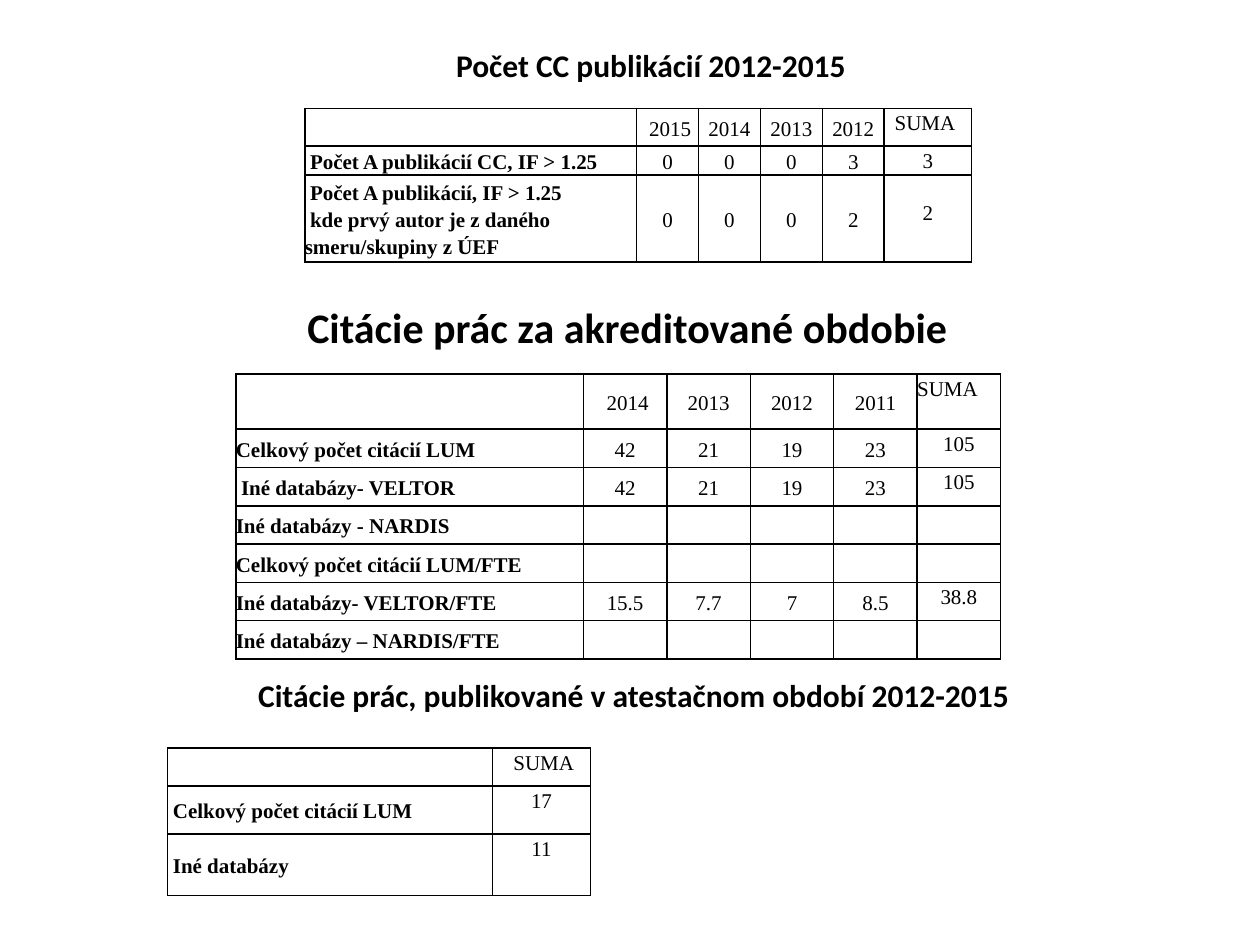
import pptx
import pptx.util
import pptx.dml.color
import pptx.enum.text
import pptx.oxml
import pptx.oxml.ns

Pt = pptx.util.Pt
ALIGN = pptx.enum.text.PP_ALIGN
ANCHOR = pptx.enum.text.MSO_ANCHOR

COLORS = {"text": "000000", "border": "000000"}
HEADING_FONT = "Calibri"
TABLE_FONT = "Times New Roman"


def write_text(paragraph, text, *, font, size, bold=False, align=ALIGN.LEFT, spacing=None):
    """Put one formatted run into a paragraph."""
    paragraph.alignment = align
    if spacing:
        paragraph.line_spacing = spacing
    run = paragraph.add_run()
    run.text = text
    run.font.name = font
    run.font.size = Pt(size)
    run.font.bold = bold
    run.font.color.rgb = pptx.dml.color.RGBColor.from_string(COLORS["text"])


def format_heading(shape, text, size, wrap):
    frame = shape.text_frame
    frame.word_wrap = wrap
    frame.auto_size = pptx.enum.text.MSO_AUTO_SIZE.SHAPE_TO_FIT_TEXT
    frame.vertical_anchor = ANCHOR.TOP
    write_text(frame.paragraphs[0], text, font=HEADING_FONT, size=size, bold=True)


def add_title(slide, text, box, size):
    title = slide.shapes.title
    title.left, title.top, title.width, title.height = map(Pt, box)
    format_heading(title, text, size, wrap=False)


def add_heading(slide, text, box, size, wrap=False):
    format_heading(slide.shapes.add_textbox(*map(Pt, box)), text, size, wrap)


def set_borders(cell):
    """Draw a 1 pt line on each side of a cell."""
    properties = cell._tc.get_or_add_tcPr()
    namespace = pptx.oxml.ns.nsdecls("a")
    for index, side in enumerate(("lnL", "lnR", "lnT", "lnB")):
        line = pptx.oxml.parse_xml(
            f'<a:{side} {namespace} w="{Pt(1)}"><a:solidFill>'
            f'<a:srgbClr val="{COLORS["border"]}"/></a:solidFill></a:{side}>')
        properties.insert(index, line)


def fill_cell(cell, text, is_label, is_sum, is_sum_header):
    cell.margin_left = cell.margin_right = cell.margin_top = cell.margin_bottom = 0
    cell.vertical_anchor = ANCHOR.TOP if is_sum else ANCHOR.MIDDLE
    cell.fill.background()
    set_borders(cell)
    if not text:
        return
    align = ALIGN.LEFT if is_label or is_sum_header else ALIGN.CENTER
    frame = cell.text_frame
    for index, line in enumerate(text.split("\n")):
        paragraph = frame.add_paragraph() if index else frame.paragraphs[0]
        write_text(paragraph, line, font=TABLE_FONT, size=12, bold=is_label,
                   align=align, spacing=1.15)


def add_table(slide, left, top, widths, heights, rows, sum_indent=0):
    """Add a table with bold labels first and top-aligned sums last."""
    table = slide.shapes.add_table(len(rows), len(widths), Pt(left), Pt(top),
                                   Pt(sum(widths)), Pt(sum(heights))).table
    table.first_row = table.horz_banding = False
    for column, width in zip(table.columns, widths):
        column.width = Pt(width)
    for row, height in zip(table.rows, heights):
        row.height = Pt(height)
    last = len(widths) - 1
    for r, values in enumerate(rows):
        for c, text in enumerate(values):
            fill_cell(table.cell(r, c), text, is_label=c == 0, is_sum=c == last,
                      is_sum_header=r == 0 and c == last)
    table.cell(0, last).margin_left = Pt(sum_indent)
    return table


def main():
    presentation = pptx.Presentation()
    presentation.slide_width, presentation.slide_height = Pt(720), Pt(540)
    slide = presentation.slides.add_slide(presentation.slide_layouts[5])

    # Publications
    add_title(slide, "Počet CC publikácií 2012-2015", (253.4, 22.6, 239, 29), 18)
    publications = add_table(
        slide, 174.2, 61.9, [189.6] + [35.4] * 4 + [49.8], [21.3, 16.6, 49.6],
        [["", " 2015", "2014", "2013", "2012", "SUMA"],
         [" Počet A publikácií CC, IF > 1.25", "0", "0", "0", "3", "3"],
         [" Počet A publikácií, IF > 1.25\n kde prvý autor je z daného smeru/skupiny z ÚEF",
          "0", "0", "0", "2", "2"]],
        sum_indent=6)
    publications.cell(2, 5).margin_top = Pt(13.5)

    # Citations in the accredited period
    add_heading(slide, "Citácie prác za akreditované obdobie", (168.5, 168.5, 384, 36), 24)
    blank = [""] * 5
    citations = ["42", "21", "19", "23", "105"]
    add_table(
        slide, 134.8, 213.8, [198.6] + [47.7] * 5, [31.5] + [21.9] * 6,
        [["", " 2014", "2013", "2012", "2011", "SUMA"],
         ["Celkový počet citácií LUM", *citations],
         [" Iné databázy- VELTOR", *citations],
         ["Iné databázy - NARDIS", *blank],
         ["Celkový počet citácií LUM/FTE", *blank],
         ["Iné databázy- VELTOR/FTE", "15.5", "7.7", "7", "8.5", "38.8"],
         ["Iné databázy – NARDIS/FTE", *blank]])

    # Citations of work published in the attestation period
    add_heading(slide, "Citácie prác, publikované v atestačnom období 2012-2015",
                (140.4, 382.6, 478, 29), 18, wrap=True)
    add_table(
        slide, 95.8, 427.5, [185.6, 56.1], [21.3, 27.4, 35.3],
        [["", "SUMA"],
         [" Celkový počet citácií LUM", "17"],
         [" Iné databázy", "11"]],
        sum_indent=12)

    presentation.save("out.pptx")


if __name__ == "__main__":
    main()
